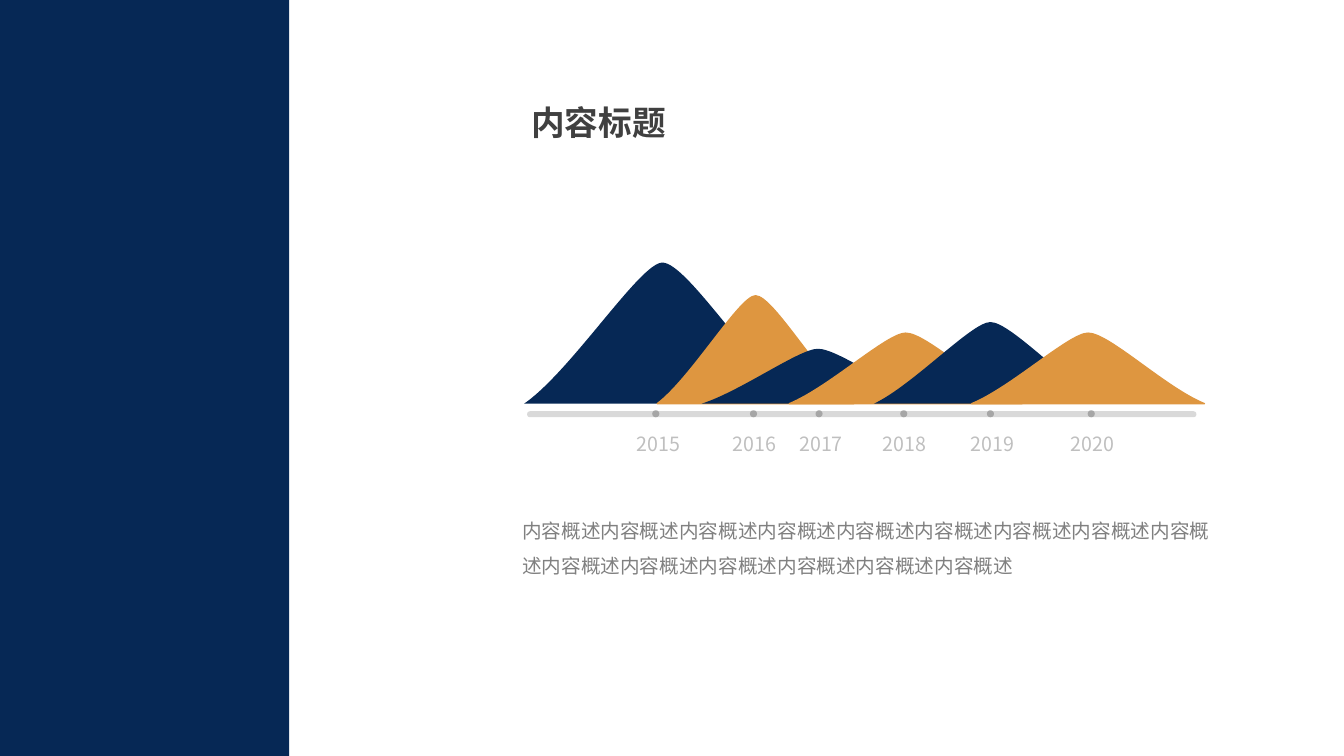
from lxml.etree import SubElement
from pptx import Presentation
from pptx.dml.color import RGBColor
from pptx.enum.shapes import MSO_SHAPE
from pptx.enum.text import MSO_ANCHOR, MSO_AUTO_SIZE, PP_ALIGN
from pptx.oxml.ns import qn
from pptx.util import Inches, Pt

WIDE, HIGH = Inches(40 / 3), Inches(7.5)
FACE = "Noto Sans CJK SC"
HUES = {
    "navy": "062855", "gold": "DE9640", "bar": "D9D9D9", "dot": "A6A6A6",
    "year": "BFBFBF", "title": "404040", "body": "808080",
}
BASE = 53.4
# left, width and height of each hill, in percent of the slide
HILLS = [
    (39, 20.58, 18.67), (48.9, 14.63, 14.27), (52.2, 17.32, 7.27),
    (58.73, 17.32, 9.33), (65.03, 17.32, 10.8), (72.3, 17.32, 9.33),
]
# dot centre and label left of each year, in percent of the width
YEARS = {
    2015: (48.79, 45.45), 2016: (56.06, 52.58), 2017: (60.94, 57.53),
    2018: (67.24, 63.75), 2019: (73.69, 70.28), 2020: (81.19, 77.7),
}
# control points, then end point, as shares of a hill's width and height
RISE = [(0.17, 0.77), (0.42, 0), (0.5, 0)]
FALL = [(0.59, 0), (0.83, 0.77), (1, 1)]


def scale(x, y):
    """Turn percentages of the slide into lengths."""
    return int(WIDE * x / 100), int(HIGH * y / 100)


def area(x, y, w, h):
    return *scale(x, y), *scale(w, h)


def color(hue):
    return RGBColor.from_string(HUES[hue])


def paint(shape, hue, edge=False):
    shape.shadow.inherit = False
    shape.fill.solid()
    shape.fill.fore_color.rgb = color(hue)
    if edge:
        shape.line.color.rgb = color(hue)
        shape.line.width = Pt(1)
    else:
        shape.line.fill.background()


def block(slide, kind, box, hue):
    shape = slide.shapes.add_shape(kind, *area(*box))
    paint(shape, hue)
    return shape


def bend(shape):
    """Replace the two slopes of a triangle by cubic curves."""
    outline = shape._element.find(".//" + qn("a:path"))
    slopes = outline.findall(qn("a:lnTo"))[:2]
    for slope, points in zip(slopes, (RISE, FALL)):
        curve = SubElement(outline, qn("a:cubicBezTo"))
        for x, y in points:
            SubElement(curve, qn("a:pt"), x=str(int(x * shape.width)),
                       y=str(int(y * shape.height)))
        outline.replace(slope, curve)


def hill(slide, left, width, height, hue):
    start, peak, end = (scale(left + x * width, BASE - y * height)
                        for x, y in ((0, 0), (0.5, 1), (1, 0)))
    form = slide.shapes.build_freeform(*start)
    form.add_line_segments([peak, end], close=True)
    shape = form.convert_to_shape()
    bend(shape)
    paint(shape, hue, edge=hue == "gold")


def write(shape, text, hue, font, frame, para):
    """Fill a shape with one paragraph and apply the format values."""
    body = shape.text_frame
    line = body.paragraphs[0]
    run = line.add_run()
    run.text = text
    for target, values in ((body, frame), (line, para),
                           (run.font, {"name": FACE, **font})):
        for key, value in values.items():
            setattr(target, key, value)
    body.auto_size = MSO_AUTO_SIZE.SHAPE_TO_FIT_TEXT
    run.font.color.rgb = color(hue)
    SubElement(run.font._element, qn("a:ea"), typeface=FACE)


def place(shape, box):
    shape.left, shape.top, shape.width, shape.height = area(*box)


def plain(shape):
    """Take the bullet and indent off the first paragraph."""
    props = shape.text_frame.paragraphs[0]._p.get_or_add_pPr()
    props.set("marL", "0")
    props.set("indent", "0")
    SubElement(props, qn("a:buNone"))


def year(slide, name, mid, left):
    block(slide, MSO_SHAPE.OVAL, (mid - 0.26, 54.27, 0.53, 0.93), "dot")
    label = slide.shapes.add_textbox(*area(left, 55.6, 7.13, 6.4))
    side, edge = Inches(0.24), Inches(0.12)
    write(label, str(name), "year", {"size": Pt(14)},
          {"word_wrap": False, "margin_left": side, "margin_right": side,
           "margin_top": edge, "margin_bottom": edge},
          {"alignment": PP_ALIGN.CENTER})


def main():
    deck = Presentation()
    deck.slide_width, deck.slide_height = WIDE, HIGH
    slide = deck.slides.add_slide(deck.slide_layouts[1])
    title, body = slide.placeholders
    frame = {"word_wrap": True, "vertical_anchor": MSO_ANCHOR.TOP}

    block(slide, MSO_SHAPE.RECTANGLE, (0, 0, 21.52, 100), "navy")
    for n, sizes in enumerate(HILLS):
        hill(slide, *sizes, ("navy", "gold")[n % 2])
    bar = block(slide, MSO_SHAPE.ROUNDED_RECTANGLE,
                (39.22, 54.4, 49.8, 0.8), "bar")
    bar.adjustments[0] = 0.5
    for name, spots in YEARS.items():
        year(slide, name, *spots)

    place(title, (38.78, 12.8, 28.43, 6.67))
    write(title, "内容标题", "title", {"size": Pt(24), "bold": True},
          frame, {"alignment": PP_ALIGN.LEFT})
    place(body, (38.1, 66.4, 53.93, 14.4))
    plain(body)
    write(body, "内容概述" * 15, "body", {"size": Pt(14)}, frame,
          {"line_spacing": 1.5, "space_before": Pt(0)})
    deck.save("out.pptx")


if __name__ == "__main__":
    main()
